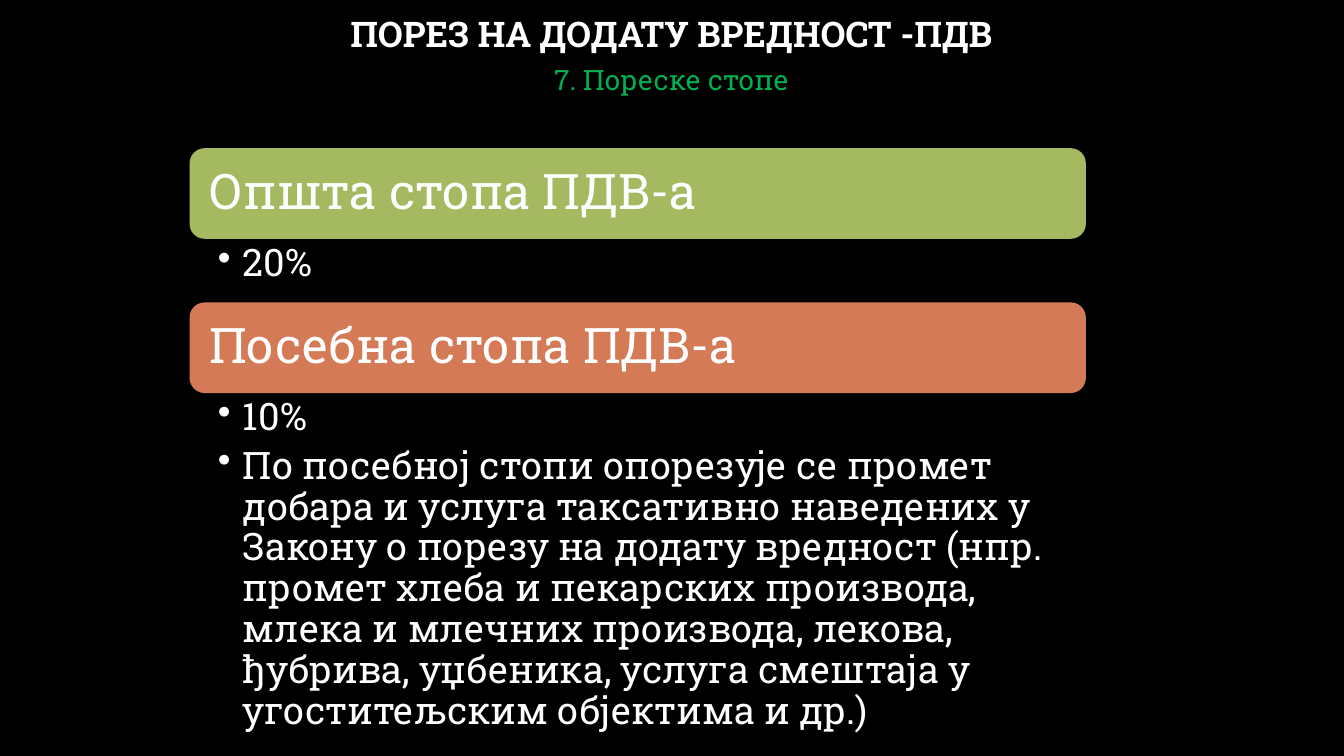
import pptx
import pptx.util
import pptx.dml.color
import pptx.enum.shapes
import pptx.enum.text
from lxml import etree

Inch, Pt = pptx.util.Inches, pptx.util.Pt
Align, Anchor = pptx.enum.text.PP_ALIGN, pptx.enum.text.MSO_ANCHOR
FONT, WHITE = "Roboto Slab", "FFFFFF"
WIDE, TALL = 13.33, 7.5
BAR = 0.12 * TALL  # height of a rate's heading bar


def color(code):
    return pptx.dml.color.RGBColor.from_string(code)


def setup(frame, pad, anchor=Anchor.TOP):
    frame.word_wrap = True
    frame.vertical_anchor = anchor
    frame.margin_left, frame.margin_top, frame.margin_right, frame.margin_bottom = map(Inch, pad)


def write(par, text, size, code=WHITE, bold=False, align=Align.LEFT, line=0.9, before=0, after=0):
    par.alignment = align
    par.line_spacing = line
    par.space_before, par.space_after = Pt(before), Pt(after)
    run = par.add_run()
    run.text = text
    run.font.name, run.font.size, run.font.bold = FONT, Pt(size), bold
    run.font.color.rgb = color(code)


def bullet(par):
    props = par._p.get_or_add_pPr()
    props.set("marL", str(Inch(0.25)))
    props.set("indent", str(-Inch(0.25)))
    mark = etree.SubElement(props, pptx.oxml.ns.qn("a:buChar"))
    mark.set("char", "•")


def add_box(slide, box, pad, anchor=Anchor.TOP):
    frame = slide.shapes.add_textbox(*map(Inch, box)).text_frame
    setup(frame, pad, anchor)
    return frame


def add_head(slide, box):
    """Title line with the topic centred beneath it."""
    left, top, width, height = box
    pad = (0.1, 0.05, 0.1, 0.05)
    title = add_box(slide, (left, top, width, 0.29), pad, Anchor.MIDDLE)
    write(title.paragraphs[0], "ПОРЕЗ НА ДОДАТУ ВРЕДНОСТ -ПДВ", 25.2, bold=True, align=Align.CENTER)
    topic = add_box(slide, (left, top + 0.29, width, height - 0.29), pad)
    write(topic.paragraphs[0], "7. Пореске стопе", 20, "00B050",
          align=Align.CENTER, line=1.2, before=10)


def add_rate(slide, box, name, fill, items):
    """Coloured heading bar with its bullet list below."""
    left, top, width, height = box
    bar = slide.shapes.add_shape(pptx.enum.shapes.MSO_SHAPE.ROUNDED_RECTANGLE,
                                 *map(Inch, (left, top, width, BAR)))
    bar.shadow.inherit = False
    bar.fill.solid()
    bar.fill.fore_color.rgb = color(fill)
    bar.line.fill.background()
    setup(bar.text_frame, [0.15] * 4, Anchor.MIDDLE)
    write(bar.text_frame.paragraphs[0], name, 35)

    frame = add_box(slide, (left, top + BAR, width, height - BAR), (0.28, 0.05, 0.27, 0.05))
    for num, item in enumerate(items):
        par = frame.add_paragraph() if num else frame.paragraphs[0]
        write(par, item, 27, after=5.4)
        bullet(par)


def main():
    deck = pptx.Presentation()
    deck.slide_width, deck.slide_height = Inch(WIDE), Inch(TALL)
    slide = deck.slides.add_slide(deck.slide_layouts[6])
    slide.background.fill.solid()
    slide.background.fill.fore_color.rgb = color("000000")

    add_head(slide, (1, 0.21, 11.32, 0.9))

    # Tax rates, stacked
    rates = [
        ("Општа стопа ПДВ-а", "A5B960", 1.53, ["20%"]),
        ("Посебна стопа ПДВ-а", "D47A57", 3.91, [
            "10%",
            "По посебној стопи опорезује се промет добара и услуга таксативно "
            "наведених у Закону о порезу на додату вредност (нпр. промет хлеба и "
            "пекарских производа, млека и млечних производа, лекова, ђубрива, "
            "уџбеника, услуга смештаја у угоститељским објектима и др.)"]),
    ]
    top = 1.47
    for name, fill, height, items in rates:
        add_rate(slide, (1.88, top, 8.89, height), name, fill, items)
        top += height

    deck.save("out.pptx")


if __name__ == "__main__":
    main()
